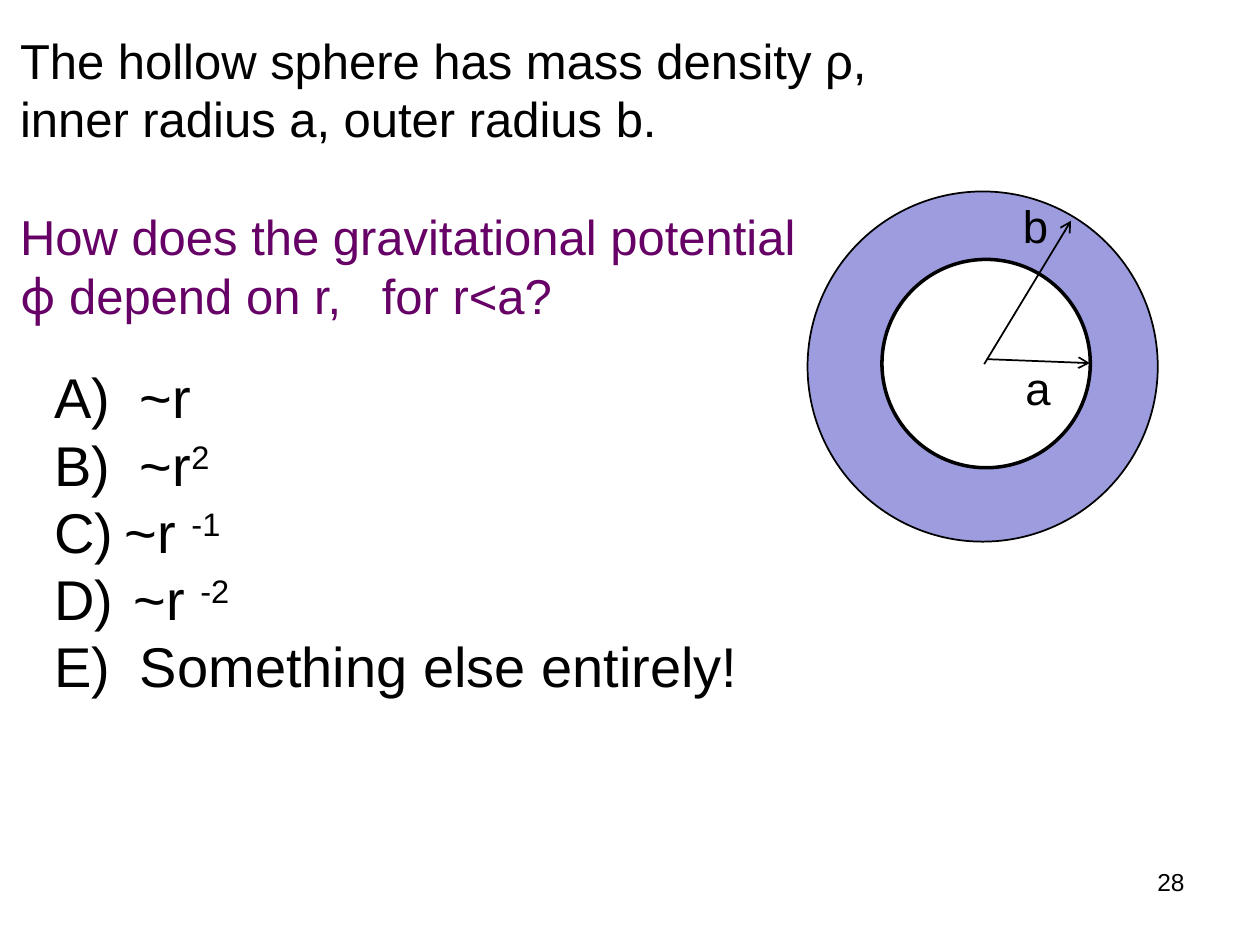
from dataclasses import dataclass
from pptx import Presentation
from pptx.dml.color import RGBColor
from pptx.enum.shapes import MSO_CONNECTOR, MSO_SHAPE
from pptx.enum.text import MSO_ANCHOR, MSO_AUTO_SIZE, PP_ALIGN
from pptx.oxml.ns import qn
from pptx.util import Cm, Pt
from lxml.etree import SubElement


@dataclass
class Theme:
    font: str = "Arial"
    symbol: str = "Open Sans"
    black: str = "000000"
    white: str = "FFFFFF"
    purple: str = "660066"
    shell: str = "9C9CDF"
    title: int = 28
    choice: int = 32
    label: int = 26
    number: int = 14


class Board:
    def __init__(self, slide, theme):
        self.slide = slide
        self.theme = theme

    def style(self, run, size, color=None, font=None):
        run.font.size = Pt(size)
        run.font.name = font or self.theme.font
        run.font.color.rgb = RGBColor.from_string(color or self.theme.black)

    def title(self, x, y, w, h, lines, gap):
        """Each line is (colour, runs); gap parts the lines where colour changes."""
        box = self.slide.shapes.title
        box.left, box.top, box.width, box.height = Cm(x), Cm(y), Cm(w), Cm(h)
        frame = box.text_frame
        frame.auto_size = MSO_AUTO_SIZE.NONE
        frame.vertical_anchor = MSO_ANCHOR.TOP
        last = None
        for i, (color, runs) in enumerate(lines):
            para = frame.paragraphs[0] if i == 0 else frame.add_paragraph()
            para.alignment = PP_ALIGN.LEFT
            if last and color != last:
                para.space_before = Pt(gap)
            last = color
            for text, font in runs:
                run = para.add_run()
                run.text = text
                self.style(run, self.theme.title, color, font)

    def text(self, x, y, w, h, words, size, align=PP_ALIGN.LEFT):
        box = self.slide.shapes.add_textbox(Cm(x), Cm(y), Cm(w), Cm(h))
        frame = box.text_frame
        frame.word_wrap = True
        frame.text = words
        para = frame.paragraphs[0]
        para.alignment = align
        self.style(para.runs[0], size)

    def choices(self, x, y, w, h, items, indent):
        """Lettered list; each item is a list of (text, raised) runs."""
        box = self.slide.shapes.add_textbox(Cm(x), Cm(y), Cm(w), Cm(h))
        frame = box.text_frame
        frame.word_wrap = True
        for i, runs in enumerate(items):
            para = frame.paragraphs[0] if i == 0 else frame.add_paragraph()
            props = para._p.get_or_add_pPr()
            props.set("marL", str(Cm(indent)))
            props.set("indent", str(-Cm(indent)))
            SubElement(props, qn("a:buFont")).set("typeface", self.theme.font)
            SubElement(props, qn("a:buAutoNum")).set("type", "alphaUcParenR")
            for text, raised in runs:
                run = para.add_run()
                run.text = text
                self.style(run, self.theme.choice)
                if raised:
                    run._r.get_or_add_rPr().set("baseline", "30000")

    def disc(self, x, y, radius, fill, width):
        """Circle about the centre x, y."""
        side = Cm(2 * radius)
        disc = self.slide.shapes.add_shape(
            MSO_SHAPE.OVAL, Cm(x - radius), Cm(y - radius), side, side)
        disc.shadow.inherit = False
        disc.fill.solid()
        disc.fill.fore_color.rgb = RGBColor.from_string(fill)
        disc.line.color.rgb = RGBColor.from_string(self.theme.black)
        disc.line.width = Pt(width)

    def arrow(self, x1, y1, x2, y2):
        line = self.slide.shapes.add_connector(
            MSO_CONNECTOR.STRAIGHT, Cm(x1), Cm(y1), Cm(x2), Cm(y2))
        line.line.color.rgb = RGBColor.from_string(self.theme.black)
        line.line.width = Pt(1)
        SubElement(line.line._get_or_add_ln(), qn("a:tailEnd")).set("type", "arrow")
        SubElement(line._element.spPr, qn("a:effectLst"))


def main():
    deck = Presentation()
    deck.slide_width, deck.slide_height = Cm(25.4), Cm(19.05)
    theme = Theme()
    board = Board(deck.slides.add_slide(deck.slide_layouts[5]), theme)

    # Question
    board.title(0.15, 0.48, 22.68, 6.25, [
        (theme.black, [("The hollow sphere has mass density ρ,", None)]),
        (theme.black, [("inner radius a, outer radius b.", None)]),
        (theme.purple, [("How does the gravitational potential", None)]),
        (theme.purple, [("ϕ", theme.symbol), (" depend on r,   for r<a?", None)]),
    ], gap=33.5)

    # Answers
    board.choices(0.84, 7.19, 15.67, 8.28, [
        [(" ~r", False)],
        [(" ~r", False), ("2", True)],
        [("~r ", False), ("-1", True)],
        [(" ", True), ("~r ", False), ("-2", True)],
        [(" Something else entirely!", False)],
    ], indent=1.42)

    # Hollow sphere with its two radii
    board.disc(19.81, 7.39, 3.53, theme.shell, 1)
    board.disc(19.88, 7.33, 2.1, theme.white, 2)
    board.arrow(19.84, 7.34, 21.59, 4.45)
    board.arrow(19.89, 7.24, 21.97, 7.32)
    for name, x, y in (("a", 20.42, 7.14), ("b", 20.37, 3.86)):
        board.text(x, y, 1.02, 1.37, name, theme.label)

    # Slide number
    board.text(18.21, 17.35, 5.92, 1.32, "28", theme.number, PP_ALIGN.RIGHT)

    deck.save("out.pptx")


if __name__ == "__main__":
    main()
